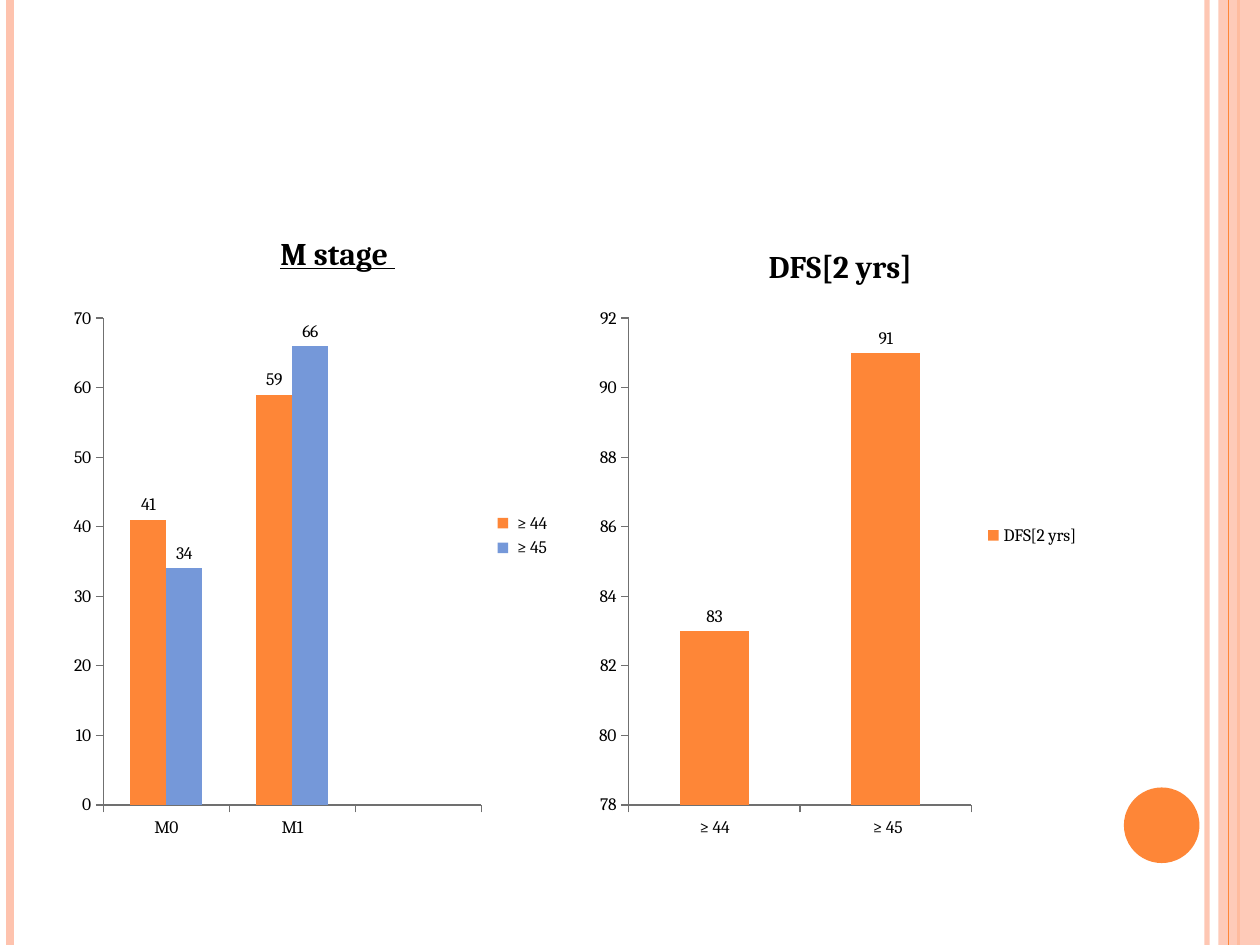
from lxml.etree import SubElement
from pptx import Presentation
from pptx.chart.data import CategoryChartData
from pptx.dml.color import RGBColor
from pptx.enum.chart import XL_CHART_TYPE, XL_LABEL_POSITION, XL_LEGEND_POSITION, XL_TICK_MARK
from pptx.enum.shapes import MSO_CONNECTOR, MSO_SHAPE
from pptx.oxml import parse_xml
from pptx.oxml.ns import nsdecls, qn
from pptx.util import Inches, Pt

ORANGE = RGBColor(0xFE, 0x86, 0x37)
PEACH = RGBColor(0xFE, 0xC3, 0xAE)
BLUE = RGBColor(0x75, 0x98, 0xD9)
GREY = RGBColor(0x70, 0x70, 0x70)
BLACK = RGBColor(0, 0, 0)
FONT = "Cambria"
SLIDE_WIDTH, SLIDE_HEIGHT = 10, 7.5


def set_opacity(shape, percent):
    color = next(shape.element.spPr.iter(qn("a:srgbClr")))
    SubElement(color, qn("a:alpha")).set("val", str(percent * 1000))


def add_stripe(slide, x, color, width):
    stripe = slide.shapes.add_connector(
        MSO_CONNECTOR.STRAIGHT, Inches(x), 0, Inches(x), Inches(SLIDE_HEIGHT))
    stripe.line.color.rgb = color
    stripe.line.width = Pt(width)
    SubElement(stripe.element.spPr, qn("a:effectLst"))
    return stripe


def add_filled_shape(slide, kind, left, top, width, height, color):
    shape = slide.shapes.add_shape(
        kind, Inches(left), Inches(top), Inches(width), Inches(height))
    shape.shadow.inherit = False
    shape.fill.solid()
    shape.fill.fore_color.rgb = color
    shape.line.fill.background()
    return shape


def add_frame(slide):
    set_opacity(add_stripe(slide, 9.58, PEACH, 3), 93)
    add_stripe(slide, 0.08, PEACH, 4.5)
    add_stripe(slide, 9.83, ORANGE, 1.5)
    band = add_filled_shape(
        slide, MSO_SHAPE.RECTANGLE, 9.67, 0, SLIDE_WIDTH - 9.67, SLIDE_HEIGHT, PEACH)
    set_opacity(band, 87)
    add_stripe(slide, 9.75, ORANGE, 0.75)
    add_filled_shape(slide, MSO_SHAPE.OVAL, 8.92, 6.25, 0.6, 0.6, ORANGE)


def set_layout(element, index, **values):
    for layout in element.findall(qn("c:layout")):
        element.remove(layout)
    settings = "".join(f'<c:{name} val="{value}"/>' for name, value in values.items())
    element.insert(index, parse_xml(
        f'<c:layout {nsdecls("c")}><c:manualLayout>{settings}</c:manualLayout></c:layout>'))


def format_axis(axis):
    axis.has_major_gridlines = False
    axis.major_tick_mark = XL_TICK_MARK.OUTSIDE
    axis.minor_tick_mark = XL_TICK_MARK.NONE
    axis.format.line.color.rgb = GREY
    axis.format.line.width = Pt(0.75)


def format_series(series, color):
    series.format.fill.solid()
    series.format.fill.fore_color.rgb = color
    series.invert_if_negative = False
    labels = series.data_labels
    labels.show_value = True
    labels.position = XL_LABEL_POSITION.OUTSIDE_END


def add_column_chart(slide, left, title, categories, series, scale, plot_width):
    data = CategoryChartData()
    data.categories = categories
    for name, values in series:
        data.add_series(name, values)
    chart = slide.shapes.add_chart(
        XL_CHART_TYPE.COLUMN_CLUSTERED, Inches(left), Inches(1.75),
        Inches(4), Inches(5), data).chart
    chart.font.name = FONT
    chart.font.size = Pt(10)
    chart.font.color.rgb = BLACK

    chart.has_title = True
    chart.chart_title.text_frame.text = title
    font = chart.chart_title.text_frame.paragraphs[0].runs[0].font
    font.name = FONT
    font.size = Pt(18)
    font.bold = True
    font.color.rgb = BLACK

    chart.has_legend = True
    chart.legend.position = XL_LEGEND_POSITION.RIGHT
    chart.legend.include_in_layout = False

    format_axis(chart.category_axis)
    format_axis(chart.value_axis)
    axis = chart.value_axis
    axis.minimum_scale, axis.maximum_scale, axis.major_unit = scale

    plot = chart.plots[0]
    plot.vary_by_categories = False
    plot.gap_width = 150
    plot.overlap = 0
    for item, color in zip(plot.series, (ORANGE, BLUE)):
        format_series(item, color)
    plot_area = next(chart.element.iter(qn("c:plotArea")))
    set_layout(plot_area, 0, layoutTarget="inner", xMode="edge", yMode="edge",
               x=0.08, y=0.155, w=plot_width, h=0.773)
    return chart


def main():
    presentation = Presentation()
    presentation.slide_width = Inches(SLIDE_WIDTH)
    presentation.slide_height = Inches(SLIDE_HEIGHT)
    slide = presentation.slides.add_slide(presentation.slide_layouts[6])
    add_frame(slide)

    stage_chart = add_column_chart(
        slide, 0.5, "M stage ", ["M0", "M1", ""],
        [(" ≥ 44 ", (41, 59, None)), (" ≥ 45", (34, 66, None))], (0, 70, 10), 0.75)
    title = stage_chart.chart_title
    title.include_in_layout = True
    title.text_frame.paragraphs[0].runs[0].font.underline = True
    title_element = next(stage_chart.element.iter(qn("c:title")))
    set_layout(title_element, 1, xMode="edge", yMode="edge", x=0.42, y=0.01)
    title_element.find(qn("c:overlay")).set("val", "1")

    add_column_chart(
        slide, 4.67, "DFS[2 yrs]", [" ≥ 44 ", " ≥ 45"],
        [("DFS[2 yrs]", (83, 91))], (78, 92, 2), 0.68)
    presentation.save("out.pptx")


if __name__ == "__main__":
    main()
